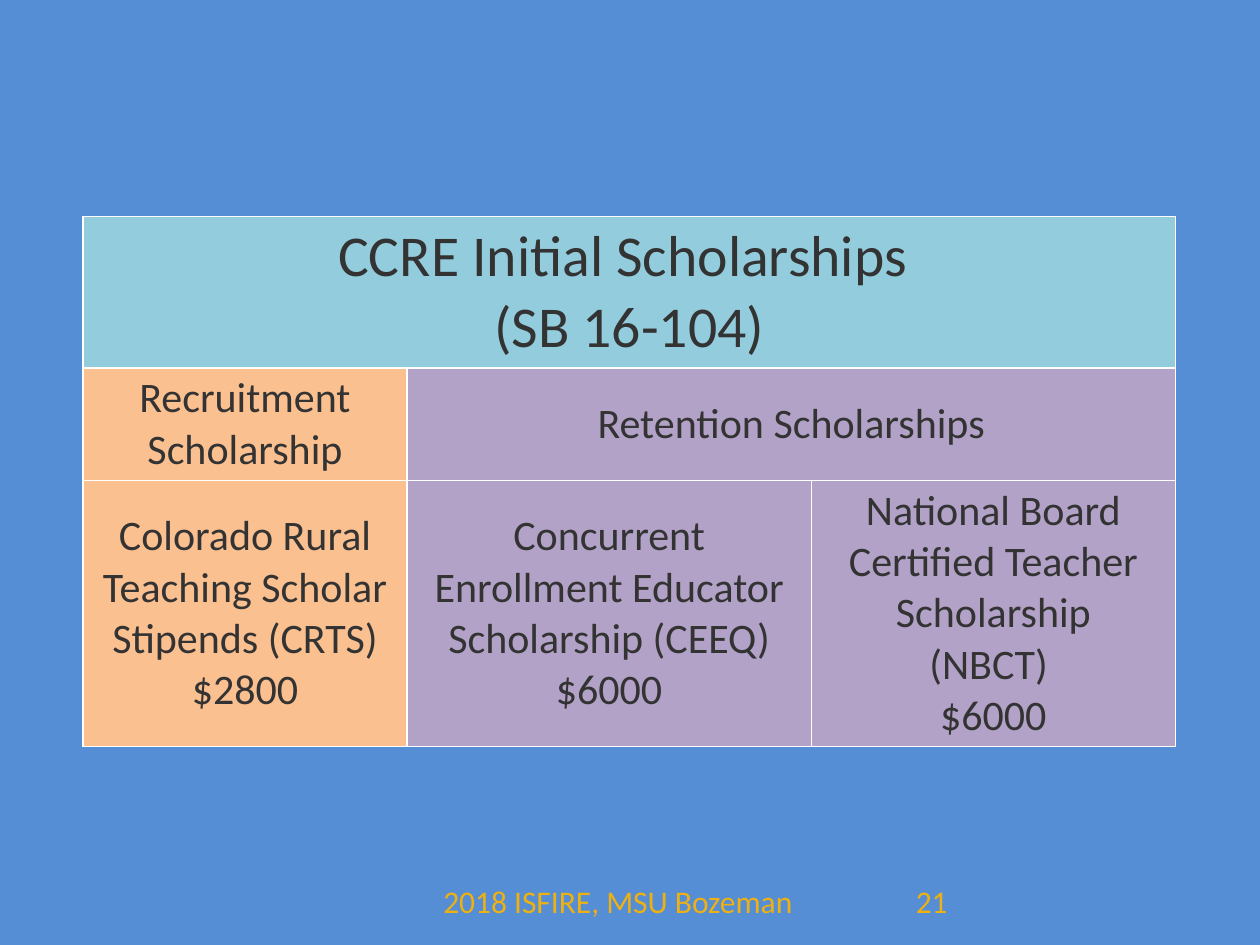
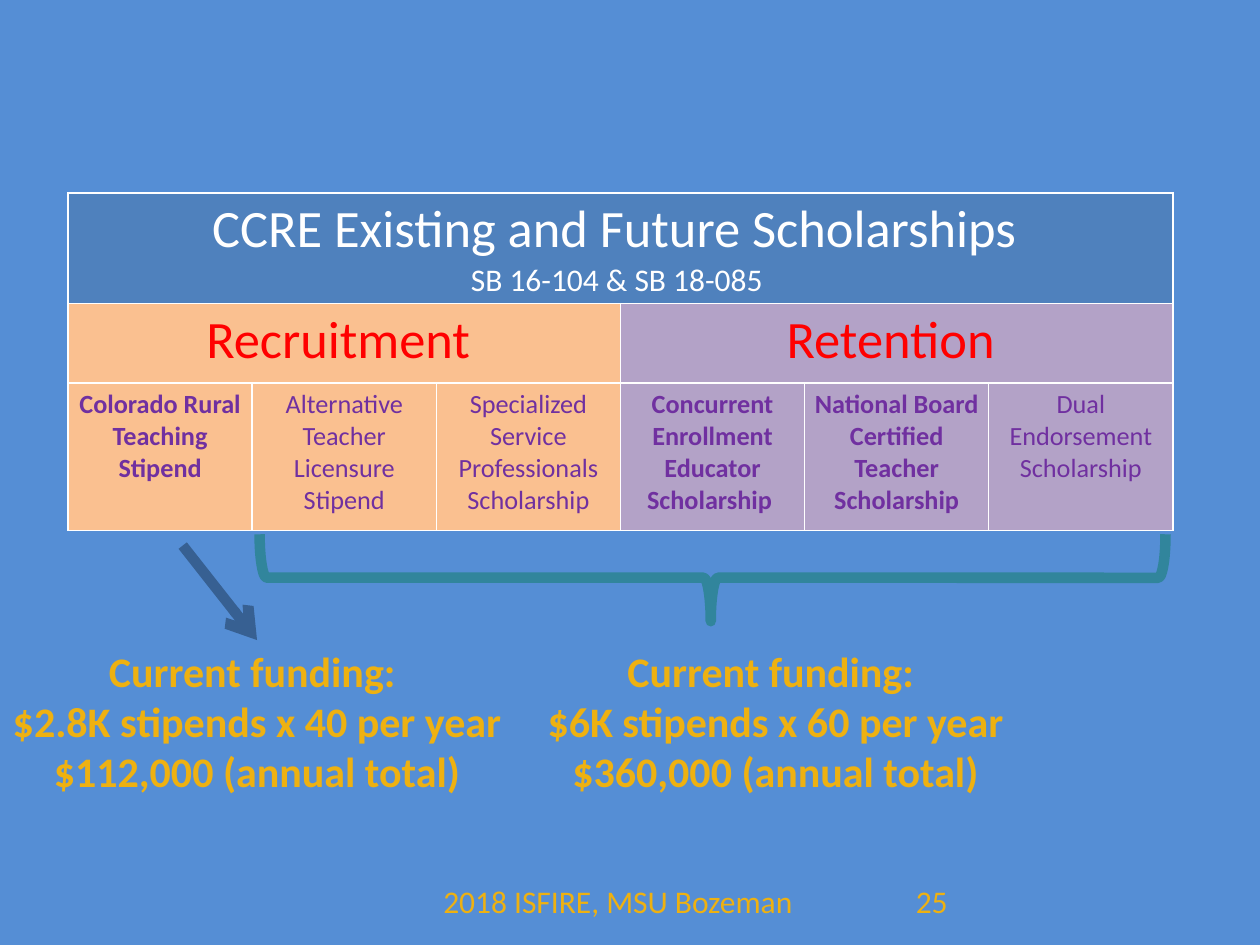
from lxml.etree import SubElement
from pptx import Presentation
from pptx.dml.color import RGBColor
from pptx.enum.shapes import MSO_CONNECTOR as CONN, MSO_SHAPE as SHAPE
from pptx.enum.text import MSO_ANCHOR as ANCHOR, MSO_AUTO_SIZE as FIT, PP_ALIGN as ALIGN
from pptx.oxml import parse_xml
from pptx.oxml.ns import nsdecls, qn
from pptx.util import Inches, Pt

FONT = "Calibri"
COLORS = {
    "back": "558ED5", "gold": "EEB111", "white": "FFFFFF", "dark": "333333",
    "red": "FF0000", "violet": "7030A0", "sky": "93CDDD", "blue": "4F81BD",
    "recruit": "FAC090", "retain": "B3A2C7", "brace": "31859C", "arrow": "376092",
}
FOOTER = "2018 ISFIRE, MSU Bozeman"
MARGINS = (0.07, 0.04)

# Each cell: columns spanned, fill, bold, lines of (text, size)
INITIAL = {
    "at": (0.66, 1.72), "cols": [2.57, 3.21, 2.89], "rows": [1.18, 0.88, 1.68],
    "colors": ["dark", "dark", "dark"],
    "anchors": [ANCHOR.TOP, ANCHOR.MIDDLE, ANCHOR.MIDDLE],
    "cells": [
        [(3, "sky", False, [("CCRE Initial Scholarships ", 33), ("(SB 16-104)", 33)])],
        [(1, "recruit", False, [("Recruitment Scholarship", 24)]),
         (2, "retain", False, [("Retention Scholarships", 24)])],
        [(1, "recruit", False, [("Colorado Rural Teaching Scholar Stipends (CRTS)", 24),
                                ("$2800", 24)]),
         (1, "retain", False, [("Concurrent Enrollment Educator Scholarship (CEEQ)", 24),
                               ("$6000", 24)]),
         (1, "retain", False, [("National Board Certified Teacher Scholarship", 24),
                               ("(NBCT) ", 24), ("$6000", 24)])],
    ],
}
PROGRAMS = [
    ("recruit", True, "Colorado Rural Teaching Stipend"),
    ("recruit", False, "Alternative Teacher Licensure Stipend"),
    ("recruit", False, "Specialized Service Professionals Scholarship"),
    ("retain", True, "Concurrent Enrollment Educator Scholarship "),
    ("retain", True, "National Board Certified Teacher Scholarship"),
    ("retain", False, "Dual Endorsement Scholarship"),
]
FUTURE = {
    "at": (0.54, 1.53), "cols": [8.77 / 6] * 6, "rows": [0.88, 0.63, 1.17],
    "colors": ["white", "red", "violet"],
    "anchors": [ANCHOR.TOP] * 3,
    "cells": [
        [(6, "blue", False, [("CCRE Existing and Future Scholarships ", 30),
                             ("SB 16-104 & SB 18-085 ", 18)])],
        [(3, "recruit", False, [("Recruitment ", 30)]),
         (3, "retain", False, [("Retention ", 30)])],
        [(1, fill, bold, [(name, 15)]) for fill, bold, name in PROGRAMS],
    ],
}
FUNDING = [
    (0, 4.08, ["Current funding: ", "$2.8K stipends x 40 per year", "$112,000 (annual total)"]),
    (4.25, 3.81, ["Current funding: ", "$6K stipends x 60 per year ", "$360,000 (annual total)"]),
]
FUNDING_TOP = 5.08


def rgb(name):
    return RGBColor.from_string(COLORS[name])


def write(tf, lines, color, bold=False, align=ALIGN.CENTER):
    for i, (text, size) in enumerate(lines):
        p = tf.add_paragraph() if i else tf.paragraphs[0]
        p.alignment = align
        r = p.add_run()
        r.text = text
        r.font.name, r.font.size, r.font.bold = FONT, Pt(size), bold
        r.font.color.rgb = rgb(color)


def set_margins(box):
    box.margin_left = box.margin_right = Inches(MARGINS[0])
    box.margin_top = box.margin_bottom = Inches(MARGINS[1])


def add_text(slide, at, lines, align=ALIGN.LEFT, bold=False):
    tf = slide.shapes.add_textbox(*map(Inches, at)).text_frame
    tf.word_wrap = True
    write(tf, lines, "gold", bold, align)
    return tf


def set_borders(cell):
    tcPr = cell._tc.get_or_add_tcPr()
    for i, side in enumerate("LRTB"):
        tcPr.insert(i, parse_xml(
            f'<a:ln{side} {nsdecls("a")} w="{Pt(1)}"><a:solidFill>'
            f'<a:srgbClr val="{COLORS["white"]}"/></a:solidFill></a:ln{side}>'))


def add_grid(slide, grid):
    cols, rows = grid["cols"], grid["rows"]
    at = (*grid["at"], sum(cols), sum(rows))
    table = slide.shapes.add_table(len(rows), len(cols), *map(Inches, at)).table
    for col, width in zip(table.columns, cols):
        col.width = Inches(width)
    for row, height in zip(table.rows, rows):
        row.height = Inches(height)
    for y, row in enumerate(grid["cells"]):
        x = 0
        for span, fill, bold, lines in row:
            cell = table.cell(y, x)
            if span > 1:
                cell.merge(table.cell(y, x + span - 1))
            for k in range(x, x + span):
                part = table.cell(y, k)
                part.fill.solid()
                part.fill.fore_color.rgb = rgb(fill)
                set_borders(part)
            set_margins(cell)
            cell.vertical_anchor = grid["anchors"][y]
            write(cell.text_frame, lines, grid["colors"][y], bold)
            x += span


def add_slide(prs, grid, number):
    slide = prs.slides.add_slide(prs.slide_layouts[6])
    slide.background.fill.solid()
    slide.background.fill.fore_color.rgb = rgb("back")
    add_grid(slide, grid)
    add_text(slide, (3.42, 6.95, 3.17, 0.4), [(FOOTER, 18)])
    add_text(slide, (7.17, 6.95, 2.33, 0.4), [(number, 18)])
    return slide


def add_funding(slide):
    for left, width, lines in FUNDING:
        tf = add_text(slide, (left, FUNDING_TOP, width, 1.29),
                      [(line, 24) for line in lines], ALIGN.CENTER, True)
        tf.auto_size = FIT.SHAPE_TO_FIT_TEXT
        set_margins(tf)

    brace = slide.shapes.add_shape(SHAPE.RIGHT_BRACE, *map(Inches, (5.31, 0.99, 0.69, 7.19)))
    brace.rotation = 90
    brace.adjustments[0], brace.adjustments[1] = 0.083, 0.502
    brace.shadow.inherit = False
    brace.fill.background()

    ends = map(Inches, (1.45, 4.33, 2.04, FUNDING_TOP))
    arrow = slide.shapes.add_connector(CONN.STRAIGHT, *ends)
    for sp, color in ((brace, "brace"), (arrow, "arrow")):
        sp.line.color.rgb = rgb(color)
        sp.line.width = Pt(6)
    SubElement(arrow.line._get_or_add_ln(), qn("a:tailEnd"), type="arrow")
    SubElement(arrow._element.spPr, qn("a:effectLst"))


def main():
    prs = Presentation()
    prs.slide_width, prs.slide_height = Inches(10), Inches(7.5)
    add_slide(prs, INITIAL, "21")
    add_funding(add_slide(prs, FUTURE, "25"))
    prs.save("out.pptx")


if __name__ == "__main__":
    main()
